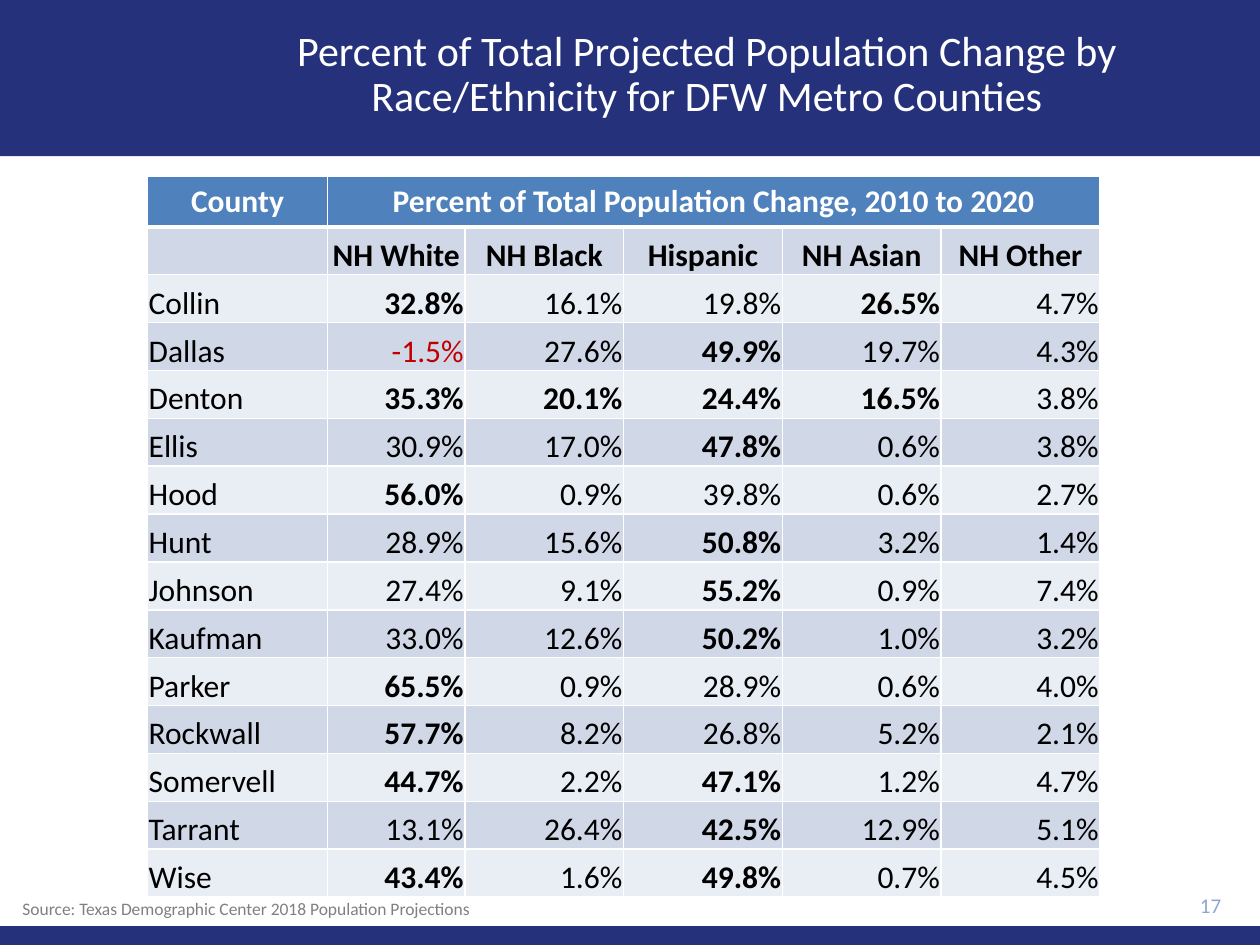
"""Build a slide tabulating projected population change by county."""
from lxml import etree
from pptx import Presentation
from pptx.dml.color import RGBColor
from pptx.enum.shapes import MSO_SHAPE
from pptx.enum.text import MSO_ANCHOR, PP_ALIGN
from pptx.oxml.ns import qn
from pptx.util import Inches, Pt

LEFT, CENTER, RIGHT = PP_ALIGN.LEFT, PP_ALIGN.CENTER, PP_ALIGN.RIGHT
TOP, MIDDLE, BOTTOM = MSO_ANCHOR.TOP, MSO_ANCHOR.MIDDLE, MSO_ANCHOR.BOTTOM
RECTANGLE = MSO_SHAPE.RECTANGLE

FONT = "Calibri"
NAVY, WHITE, BLACK, RED = "25327B", "FFFFFF", "000000", "C00000"
HEADER_BLUE, BANDS = "4F81BD", ("D0D8E8", "E9EDF4")

TITLE = "Percent of Total Projected Population Change by Race/Ethnicity for DFW Metro Counties"
SOURCE = "Source: Texas Demographic Center 2018 Population Projections"
PAGE = "17"
HEADINGS = ("County", "Percent of Total Population Change, 2010 to 2020")
GROUPS = ("NH White", "NH Black", "Hispanic", "NH Asian", "NH Other")
COUNTIES = [
    ("Collin", (32.8, 16.1, 19.8, 26.5, 4.7), ("NH White", "NH Asian")),
    ("Dallas", (-1.5, 27.6, 49.9, 19.7, 4.3), ("Hispanic",)),
    ("Denton", (35.3, 20.1, 24.4, 16.5, 3.8), GROUPS[:4]),
    ("Ellis", (30.9, 17.0, 47.8, 0.6, 3.8), ("Hispanic",)),
    ("Hood", (56.0, 0.9, 39.8, 0.6, 2.7), ("NH White",)),
    ("Hunt", (28.9, 15.6, 50.8, 3.2, 1.4), ("Hispanic",)),
    ("Johnson", (27.4, 9.1, 55.2, 0.9, 7.4), ("Hispanic",)),
    ("Kaufman", (33.0, 12.6, 50.2, 1.0, 3.2), ("Hispanic",)),
    ("Parker", (65.5, 0.9, 28.9, 0.6, 4.0), ("NH White",)),
    ("Rockwall", (57.7, 8.2, 26.8, 5.2, 2.1), ("NH White",)),
    ("Somervell", (44.7, 2.2, 47.1, 1.2, 4.7), ("NH White", "Hispanic")),
    ("Tarrant", (13.1, 26.4, 42.5, 12.9, 5.1), ("Hispanic",)),
    ("Wise", (43.4, 1.6, 49.8, 0.7, 4.5), ("NH White", "Hispanic")),
]
COLUMN_WIDTHS = (1.43, 1.09, 1.26, 1.26, 1.26, 1.26)
ROW_HEIGHT = 0.38
BARS = [(0, 1.24), (7.35, 0.15)]


def rgb(color):
    return RGBColor.from_string(color)


def write(paragraph, text, size, color, align, bold=False):
    paragraph.text = text
    paragraph.alignment = align
    font = paragraph.font
    font.name, font.size, font.bold = FONT, Pt(size), bold
    font.color.rgb = rgb(color)


def add_bar(slide, top, height):
    bar = slide.shapes.add_shape(RECTANGLE, 0, Inches(top), Inches(10), Inches(height))
    bar.shadow.inherit = False
    bar.fill.solid()
    bar.fill.fore_color.rgb = rgb(NAVY)
    bar.line.fill.background()


def add_text(slide, box, text, size, color, align, anchor):
    frame = slide.shapes.add_textbox(*map(Inches, box)).text_frame
    frame.word_wrap = True
    frame.vertical_anchor = anchor
    write(frame.paragraphs[0], text, size, color, align)
    return frame.paragraphs[0]


def add_borders(cell, bottom_width):
    properties = cell._tc.get_or_add_tcPr()
    for side, width in (("L", 1), ("R", 1), ("T", 1), ("B", bottom_width)):
        line = etree.SubElement(properties, qn(f"a:ln{side}"), w=str(Pt(width)))
        fill = etree.SubElement(line, qn("a:solidFill"))
        etree.SubElement(fill, qn("a:srgbClr"), val=WHITE)


def fill_cell(cell, text, fill, color, align, bold, header=False):
    add_borders(cell, 3 if header else 1)
    cell.fill.solid()
    cell.fill.fore_color.rgb = rgb(fill)
    cell.vertical_anchor = MIDDLE if header else BOTTOM
    if not header:
        cell.margin_left = cell.margin_right = cell.margin_top = Inches(0.01)
        cell.margin_bottom = 0
    write(cell.text_frame.paragraphs[0], text, 18, color, align, bold)


def add_county_table(slide):
    row_count = len(COUNTIES) + 2
    size = Inches(sum(COLUMN_WIDTHS)), Inches(ROW_HEIGHT * row_count)
    table = slide.shapes.add_table(
        row_count, len(COLUMN_WIDTHS), Inches(1.17), Inches(1.4), *size).table
    for column, width in zip(table.columns, COLUMN_WIDTHS):
        column.width = Inches(width)
    for row in table.rows:
        row.height = Inches(ROW_HEIGHT)

    table.cell(0, 1).merge(table.cell(0, len(GROUPS)))
    headings = HEADINGS + ("",) * (len(GROUPS) - 1)
    for c, heading in enumerate(headings):
        fill_cell(table.cell(0, c), heading, HEADER_BLUE, WHITE, CENTER, True, header=True)
    for c, group in enumerate(("",) + GROUPS):
        fill_cell(table.cell(1, c), group, BANDS[0], BLACK, CENTER, True)
    for r, (county, shares, leading) in enumerate(COUNTIES, 2):
        band = BANDS[(r - 1) % 2]
        fill_cell(table.cell(r, 0), county, band, BLACK, LEFT, False)
        for c, (group, share) in enumerate(zip(GROUPS, shares), 1):
            color = RED if share < 0 else BLACK
            fill_cell(table.cell(r, c), f"{share:.1f}%", band, color, RIGHT, group in leading)


def main():
    deck = Presentation()
    deck.slide_width, deck.slide_height = Inches(10), Inches(7.5)
    slide = deck.slides.add_slide(deck.slide_layouts[6])
    for top, height in BARS:
        add_bar(slide, top, height)
    title = add_text(slide, (1.32, 0.1, 8.58, 1), TITLE, 24, WHITE, CENTER, MIDDLE)
    title.line_spacing = 0.9
    add_county_table(slide)
    add_text(slide, (8.9, 7.01, 0.89, 0.34), PAGE, 12, "8FA5D1", RIGHT, MIDDLE)
    add_text(slide, (0.08, 7.08, 9.58, 0.27), SOURCE, 10, "808080", LEFT, TOP)
    deck.save("out.pptx")


if __name__ == "__main__":
    main()
